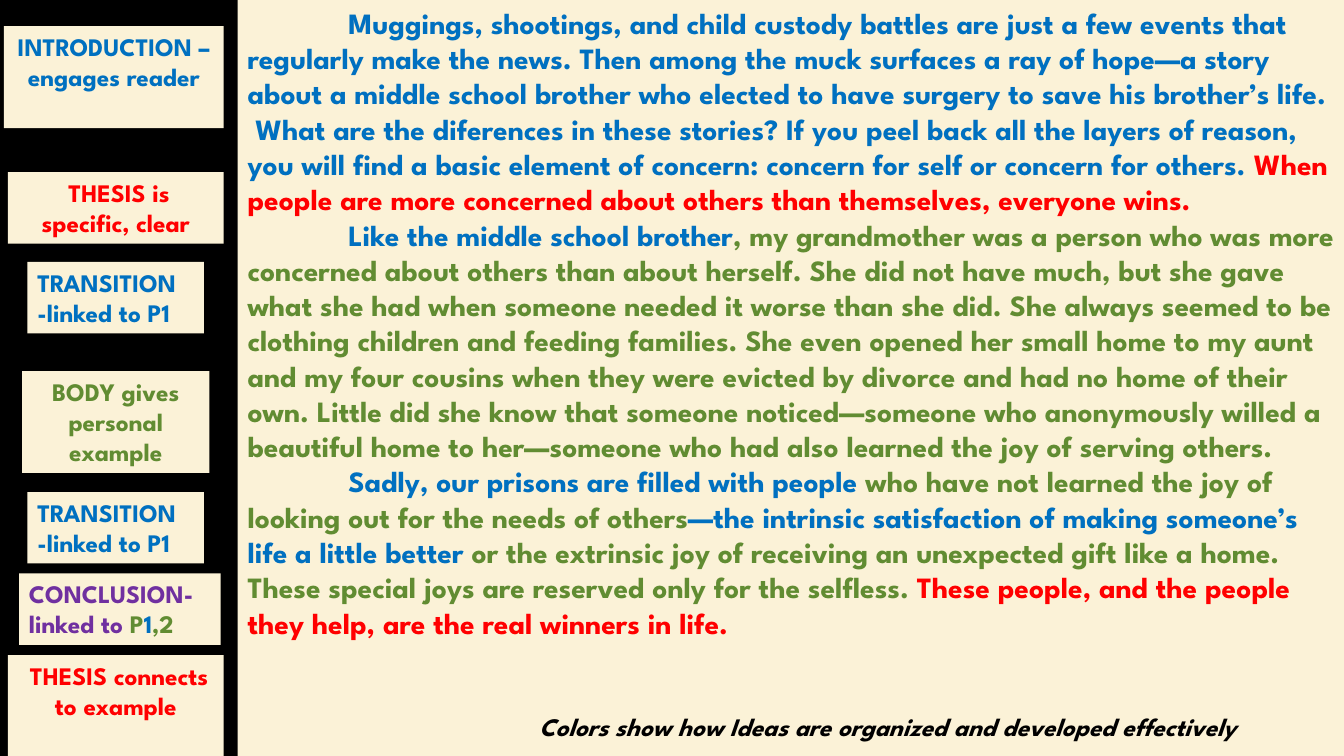
from dataclasses import dataclass

from pptx import Presentation
from pptx.dml.color import RGBColor
from pptx.enum.shapes import MSO_SHAPE as Shape
from pptx.enum.text import MSO_ANCHOR as Anchor, PP_ALIGN as Align
from pptx.util import Cm, Pt


@dataclass(frozen=True)
class Theme:
    font: str = "League Spartan"
    back: str = "000000"
    paper: str = "FBF2D7"
    ink: str = "000000"
    link: str = "0070C0"
    thesis: str = "FF0000"
    example: str = "618C32"
    conclusion: str = "7030A0"
    essay_size: int = 21
    label_size: int = 18


T = Theme()

ESSAY = [
    [("Muggings, shootings, and child custody battles are just a few events that "
      "regularly make the news. Then among the muck surfaces a ray of hope—a story "
      "about a middle school brother who elected to have surgery to save his "
      "brother’s life.  What are the diferences in these stories? If you peel back "
      "all the layers of reason, you will find a basic element of concern: concern "
      "for self or concern for others. ", T.link),
     ("When people are more concerned about others than themselves, everyone wins.",
      T.thesis)],
    [("Like the middle school brother", T.link),
     (", my grandmother was a person who was more concerned about others than about "
      "herself. She did not have much, but she gave what she had when someone needed "
      "it worse than she did. She always seemed to be clothing children and feeding "
      "families. She even opened her small home to my aunt and my four cousins when "
      "they were evicted by divorce and had no home of their own. Little did she know "
      "that someone noticed—someone who anonymously willed a beautiful home to "
      "her—someone who had also learned the joy of serving others.", T.example)],
    [("Sadly, our prisons are filled with people ", T.link),
     ("who have not learned the joy of looking out for the needs of others", T.example),
     ("—the intrinsic satisfaction of making someone’s life a little better ", T.link),
     ("or the extrinsic joy of receiving an unexpected gift like a home. These special "
      "joys are reserved only for the selfless. ", T.example),
     ("These people, and the people they help, are the real winners in life.",
      T.thesis)],
]

TRANSITION = [("TRANSITION -linked to P1", T.link)]
LABELS = [
    (0.1, 0.66, 5.54, 2.57, Align.CENTER, [("INTRODUCTION –engages reader", T.link)]),
    (0.2, 4.34, 5.44, 1.8, Align.CENTER, [(" THESIS is specific, clear", T.thesis)]),
    (0.69, 6.6, 4.45, 1.8, Align.LEFT, TRANSITION),
    (0.56, 9.35, 4.72, 2.57, Align.CENTER, [("BODY gives personal example", T.example)]),
    (0.69, 12.4, 4.45, 1.8, Align.LEFT, TRANSITION),
    (0.48, 14.45, 5.08, 1.8, Align.LEFT,
     [("CONCLUSION-linked to ", T.conclusion), ("P", T.example), ("1", T.link),
      (",2", T.example)]),
    (0.2, 16.51, 5.44, 2.54, Align.CENTER, [(" THESIS connects to example", T.thesis)]),
]


def rgb(value):
    return RGBColor.from_string(value)


def add_run(p, text, *, color, size, italic=None):
    r = p.add_run()
    r.text = text
    r.font.name = T.font
    r.font.size = Pt(size)
    r.font.bold = True
    r.font.italic = italic
    r.font.color.rgb = rgb(color)


def fill_text(tf, paragraphs, *, size, align=Align.LEFT, indent=0, italic=None):
    tf.word_wrap = True
    tf.vertical_anchor = Anchor.TOP
    for i, runs in enumerate(paragraphs):
        p = tf.paragraphs[0] if i == 0 else tf.add_paragraph()
        p.alignment = align
        if indent:
            p._p.get_or_add_pPr().set("indent", str(Cm(indent)))
        for text, color in runs:
            add_run(p, text, color=color, size=size, italic=italic)


def add_panel(s, left, top, width, height):
    sp = s.shapes.add_shape(Shape.RECTANGLE, Cm(left), Cm(top), Cm(width), Cm(height))
    sp.shadow.inherit = False
    sp.fill.solid()
    sp.fill.fore_color.rgb = rgb(T.paper)
    sp.line.fill.background()
    return sp.text_frame


def add_essay(s, left, top, width, height):
    tf = add_panel(s, left, top, width, height)
    fill_text(tf, ESSAY, size=T.essay_size, indent=2.54)
    caption_left, caption_top = left + 7.35, top + 17.81
    caption = s.shapes.add_textbox(Cm(caption_left), Cm(caption_top),
                                   Cm(left + width - caption_left), Cm(1.02))
    fill_text(caption.text_frame,
              [[("Colors show how Ideas are organized and developed effectively", T.ink)]],
              size=T.label_size, italic=True)


def add_labels(s, left, top):
    for x, y, width, height, align, runs in LABELS:
        tf = add_panel(s, left + x, top + y, width, height)
        fill_text(tf, [runs], size=T.label_size, align=align)


def main():
    prs = Presentation()
    prs.slide_width, prs.slide_height = Cm(33.87), Cm(19.05)
    s = prs.slides.add_slide(prs.slide_layouts[6])
    s.background.fill.solid()
    s.background.fill.fore_color.rgb = rgb(T.back)
    add_essay(s, 5.99, 0, 27.88, 19.05)
    add_labels(s, 0, 0)
    prs.save("out.pptx")


if __name__ == "__main__":
    main()
